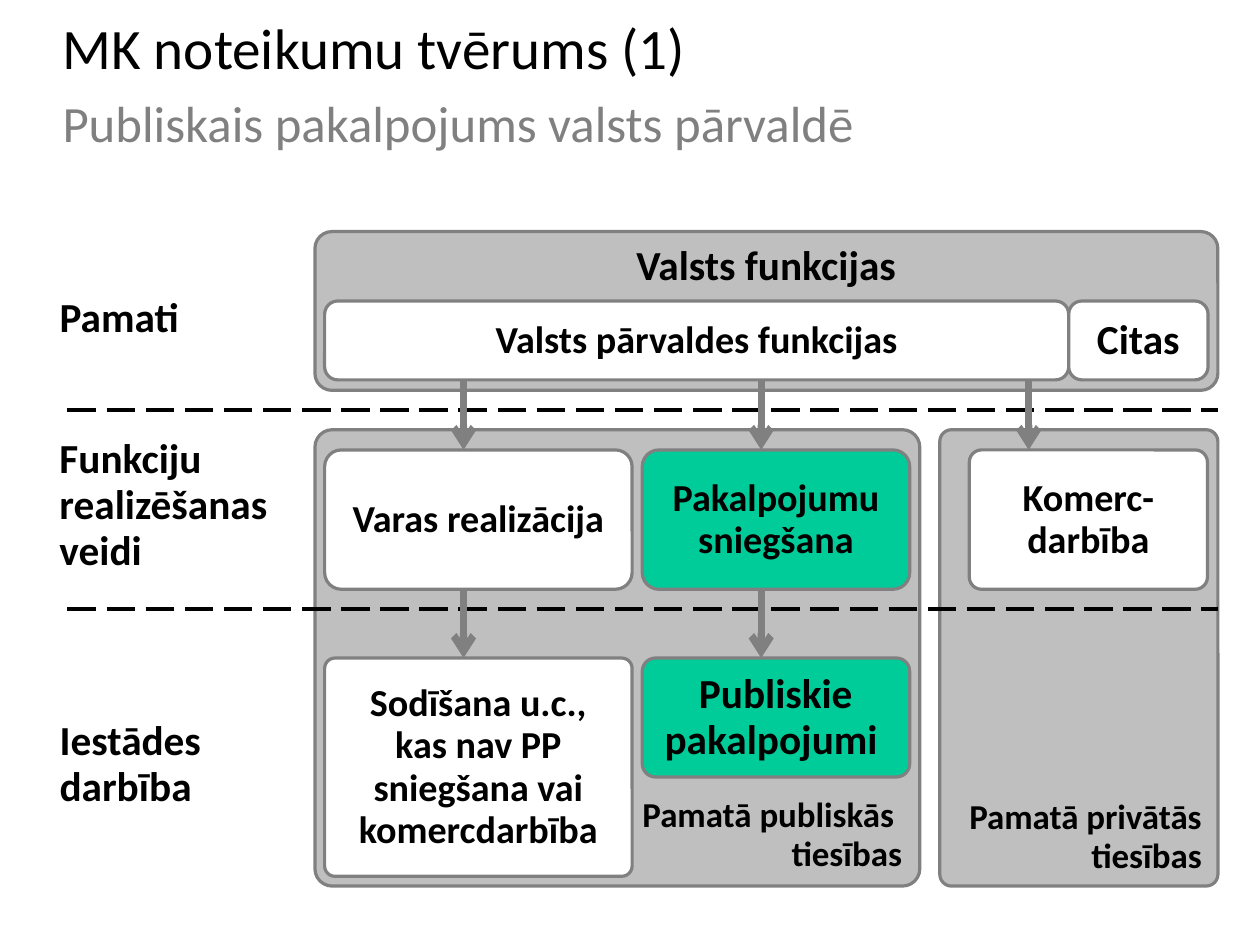
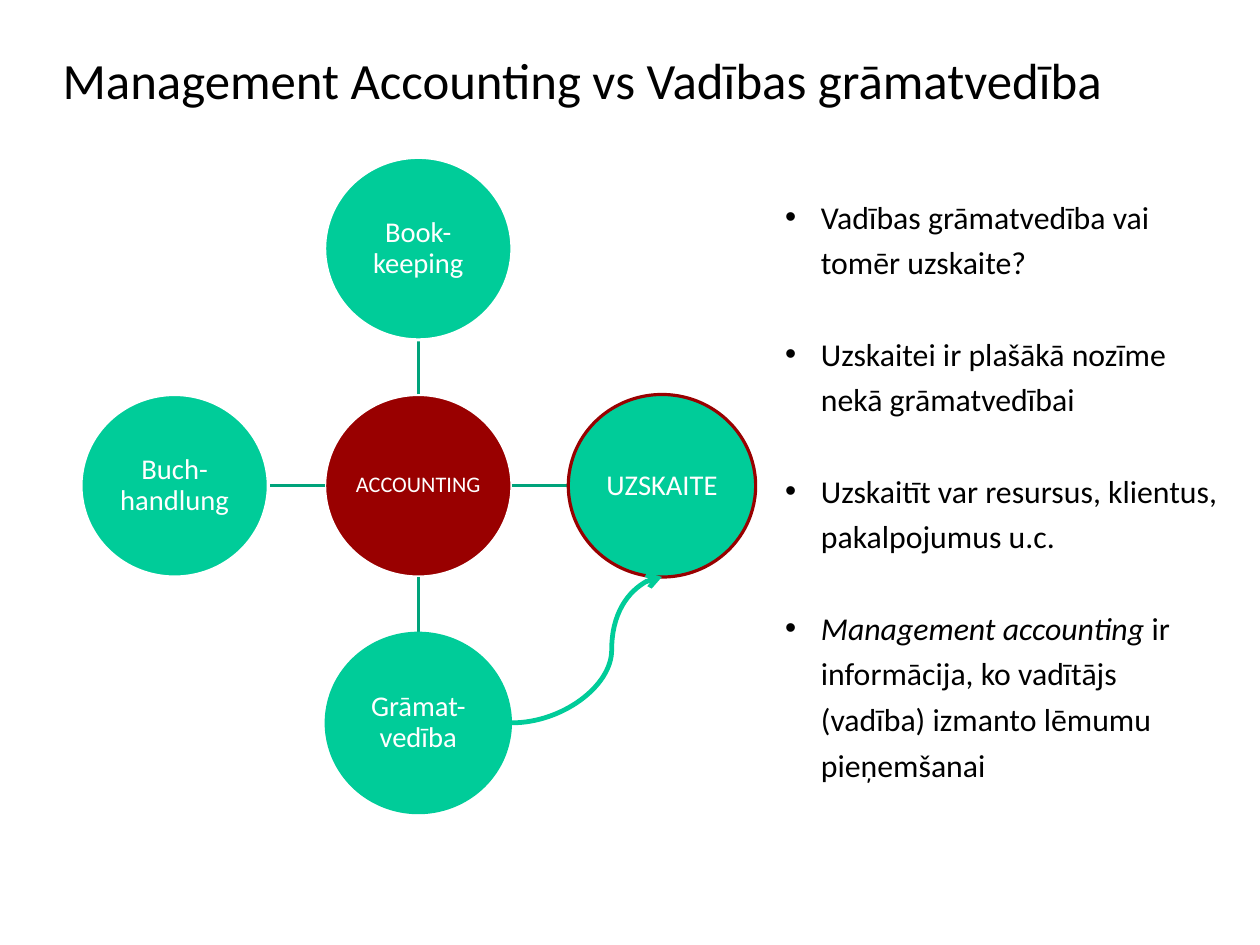
from dataclasses import dataclass
from lxml.etree import SubElement as Sub
from pptx import Presentation
from pptx.dml.color import RGBColor as Rgb
from pptx.enum.dml import MSO_LINE as Dash
from pptx.enum.shapes import MSO_CONNECTOR as Wire, MSO_SHAPE as Kind
from pptx.enum.text import MSO_ANCHOR as Anchor, PP_ALIGN as Align
from pptx.oxml.ns import qn
from pptx.util import Pt


@dataclass(frozen=True)
class Theme:
    font: str = "Calibri"
    ink: str = "000000"
    white: str = "FFFFFF"
    gray: str = "808080"
    pale: str = "BFBFBF"
    green: str = "00CC99"
    deep: str = "00A37B"
    red: str = "990000"
    head: int = 36
    sub: int = 32
    large: int = 26
    mid: int = 24
    note: int = 22
    body: int = 20
    ring: int = 18
    core: int = 14


T = Theme()
PAD = (8, 4.3)


def put(slide, kind, area, text, size, color=T.ink, fill=None, edge=None,
        bold=False, align=Align.LEFT, anchor=Anchor.MIDDLE, pad=PAD,
        lead=0.93, gap=0, dot=False, round=None):
    x, y, w, h = area
    spot = [Pt(v) for v in area]
    if kind is None:
        shape = slide.shapes.add_textbox(*spot)
    else:
        shape = slide.shapes.add_shape(kind, *spot)
        shape.shadow.inherit = False
        shape.fill.solid()
        shape.fill.fore_color.rgb = Rgb.from_string(fill)
        if edge:
            shape.line.color.rgb = Rgb.from_string(edge)
            shape.line.width = Pt(2)
        else:
            shape.line.fill.background()
        if round:
            shape.adjustments[0] = round / min(w, h)
    frame = shape.text_frame
    frame.word_wrap = True
    frame.vertical_anchor = anchor
    frame.margin_left = frame.margin_right = Pt(pad[0])
    frame.margin_top = frame.margin_bottom = Pt(pad[1])
    frame.text = text
    for i, para in enumerate(frame.paragraphs):
        if dot:
            prop = para._p.get_or_add_pPr()
            prop.set("marL", str(Pt(22.5)))
            prop.set("indent", str(-Pt(22.5)))
            Sub(Sub(prop, qn("a:buClr")), qn("a:srgbClr"), val=T.ink)
            Sub(prop, qn("a:buFont"), typeface="Arial")
            Sub(prop, qn("a:buChar"), char="•")
        para.alignment = align
        para.line_spacing = lead
        if i:
            para.space_before = Pt(gap)
        para.font.name = T.font
        para.font.size = Pt(size)
        para.font.bold = bold
        para.font.color.rgb = Rgb.from_string(color)
    return frame


def join(slide, kind, ends, color, width, dash=None, tip=False):
    line = slide.shapes.add_connector(kind, *[Pt(v) for v in ends])
    line.line.color.rgb = Rgb.from_string(color)
    line.line.width = Pt(width)
    if dash:
        line.line.dash_style = dash
    prop = line._element.spPr
    if tip:
        Sub(prop.find(qn("a:ln")), qn("a:tailEnd"), type="arrow")
    Sub(prop, qn("a:effectLst"))
    return prop


deck = Presentation()
deck.slide_width, deck.slide_height = Pt(793.7), Pt(595.28)
blank = deck.slide_layouts[6]
scope, terms = [deck.slides.add_slide(blank) for _ in range(2)]

heads = [
    (scope, 2, "MK noteikumu tvērums (1)\nPubliskais pakalpojums valsts pārvaldē", T.head),
    (terms, 0, "Management Accounting vs Vadības grāmatvedība", T.sub),
]
for slide, y, text, size in heads:
    frame = put(slide, None, (39.4, y, 714, 99.5), text, size, pad=(0, 0), lead=1.01, gap=6.6)
    if slide is scope:
        font = frame.paragraphs[1].font
        font.size = Pt(T.sub)
        font.color.rgb = Rgb.from_string(T.gray)

panels = [
    ((198.4, 145.9, 568.8, 100), "Valsts funkcijas", T.large, Align.CENTER, Anchor.TOP, 10.7),
    ((198.4, 270.7, 381, 287.5), "Pamatā publiskās \ntiesības", T.note, Align.RIGHT, Anchor.BOTTOM, 10.9),
    ((592, 270.7, 175.2, 287.5), "Pamatā privātās tiesības", T.note, Align.RIGHT, Anchor.BOTTOM, 7.4),
]
for area, text, size, align, anchor, round in panels:
    put(scope, Kind.ROUNDED_RECTANGLE, area, text, size, fill=T.pale, edge=T.gray,
        bold=True, align=align, anchor=anchor, round=round)

labels = [
    (182, 156, 37.4, "Pamati"),
    (270.7, 150, 96.5, "Funkciju realizēšanas veidi"),
    (448.2, 131, 67, "Iestādes darbība"),
]
for y, w, h, text in labels:
    put(scope, None, (29.5, y, w, h), text, T.large, bold=True, anchor=Anchor.TOP)

left, center, right = (204.5, 193.7), (404.6, 168.5), (610.6, 150)
top, middle, base = 189.6, 283.4, 414.5
cards = [
    (left, middle, 87.8, "Varas realizācija", T.mid, T.white, 10.5),
    (center, middle, 87.8, "Pakalpojumu sniegšana", T.mid, T.green, 10.5),
    (right, middle, 87.8, "Komerc-darbība", T.mid, T.white, 7.7),
    ((204.5, 468.7), top, 49.7, "Valsts pārvaldes funkcijas", T.mid, T.white, 8.3),
    ((673.2, 87.8), top, 49.7, "Citas", T.large, T.white, 8.3),
    (left, base, 137.5, "Sodīšana u.c., kas nav PP sniegšana vai komercdarbība", T.mid, T.white, 6.5),
    (center, base, 75, "Publiskie pakalpojumi ", T.large, T.green, 8.4),
]
for (x, w), y, h, text, size, fill, round in cards:
    put(scope, Kind.ROUNDED_RECTANGLE, (x, y, w, h), text, size, fill=fill,
        edge=T.gray, bold=True, align=Align.CENTER, round=round)

for y in (258.4, 383.6):
    join(scope, Wire.STRAIGHT, (42.5, y, 767.2, y), T.ink, 2.25, dash=Dash.LONG_DASH)
for start, end, spots in ((239.5, middle, (292, 479.5, 648)), (371, base, (292, 479.5))):
    for x in spots:
        join(scope, Wire.STRAIGHT, (x, start, x, end), T.gray, 4.5, tip=True)

midx, midy = 263.5, 306
wide, tall = 118, 115
stepx, stepy = 153.5, 149.4
rings = [
    (0, 0, "ACCOUNTING", T.core, T.red, T.white),
    (0, -1, "Book-keeping", T.ring, T.green, T.white),
    (1, 0, "UZSKAITE", T.ring, T.green, T.red),
    (0, 1, "Grāmat-vedība", T.ring, T.green, None),
    (-1, 0, "Buch-handlung", T.ring, T.green, T.white),
]
for dx, dy, text, size, fill, edge in rings:
    if dx or dy:
        join(terms, Wire.STRAIGHT,
             (midx + dx * wide / 2, midy + dy * tall / 2,
              midx + dx * (stepx - wide / 2), midy + dy * (stepy - tall / 2)), T.deep, 2)
    put(terms, Kind.OVAL,
        (midx + dx * stepx - wide / 2, midy + dy * stepy - tall / 2, wide, tall),
        text, size, color=T.white, fill=fill, edge=edge, align=Align.CENTER,
        pad=(0, 0), lead=0.9)

curve = join(terms, Wire.CURVE,
             (midx + wide / 2, midy + stepy, midx + stepx, midy + tall / 2),
             T.green, 3, tip=True)
Sub(curve.find(qn("a:prstGeom")).find(qn("a:avLst")), qn("a:gd"), name="adj1", fmla="val 66500")

points = [
    "Vadības grāmatvedība vai tomēr uzskaite?",
    "Uzskaitei ir plašākā nozīme nekā grāmatvedībai",
    "Uzskaitīt var resursus, klientus, pakalpojumus u.c.",
    "Management accounting ",
]
frame = put(terms, None, (487.5, 116, 289.5, 420), "\n".join(points), T.body,
            anchor=Anchor.TOP, pad=(7.2, 3.6), lead=1.2, gap=28.7, dot=True)
last = frame.paragraphs[-1]
last.runs[0].font.italic = True
last.add_run().text = "ir informācija, ko vadītājs (vadība) izmanto lēmumu pieņemšanai"

deck.save("out.pptx")
